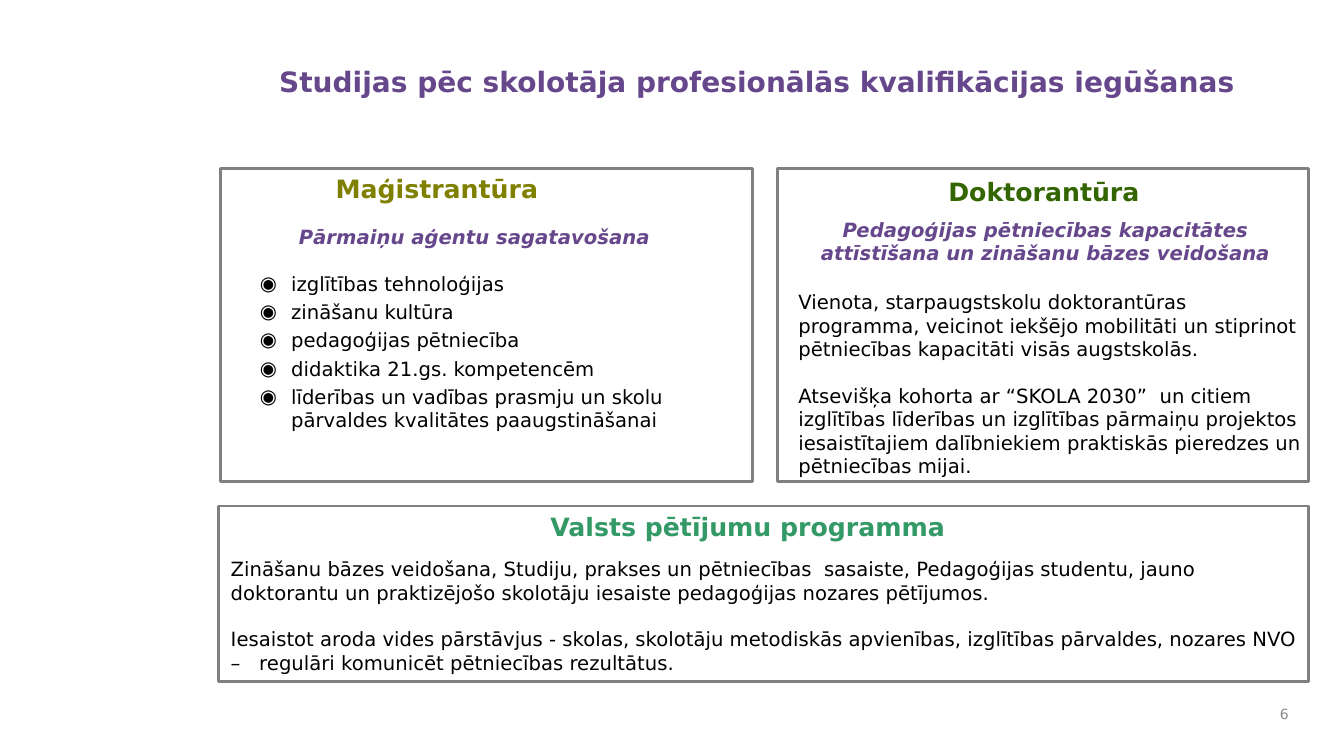
from lxml.etree import SubElement
from pptx import Presentation
from pptx.dml.color import RGBColor
from pptx.enum.shapes import MSO_SHAPE
from pptx.enum.text import MSO_ANCHOR, PP_ALIGN
from pptx.oxml.ns import qn
from pptx.util import Pt

PX = 9144  # EMU per px, at 100 px to the inch
FONT = "DejaVu Sans"

PURPLE = RGBColor(0x67, 0x47, 0x8B)
OLIVE = RGBColor(0x80, 0x80, 0x00)
DARK_GREEN = RGBColor(0x33, 0x66, 0x00)
GREEN = RGBColor(0x33, 0x99, 0x66)
BLACK = RGBColor(0x00, 0x00, 0x00)
GREY = RGBColor(0x80, 0x80, 0x80)
LIGHT_GREY = RGBColor(0x89, 0x89, 0x89)

HEADING = {"size": Pt(18), "bold": True}
SUBHEADING = {"size": Pt(14), "bold": True, "italic": True}
BODY = {"size": Pt(14)}
LINE_GAP = 16.4
BULLET_GAP = 3.3
BULLET_INDENT = 31

TOPICS = [
    "izglītības tehnoloģijas",
    "zināšanu kultūra",
    "pedagoģijas pētniecība",
    "didaktika 21.gs. kompetencēm",
    "līderības un vadības prasmju un skolu pārvaldes kvalitātes paaugstināšanai",
]
DOCTORATE = [
    "Vienota, starpaugstskolu doktorantūras programma, veicinot iekšējo mobilitāti "
    "un stiprinot pētniecības kapacitāti visās augstskolās.",
    "Atsevišķa kohorta ar “SKOLA 2030”  un citiem izglītības līderības un izglītības "
    "pārmaiņu projektos iesaistītajiem dalībniekiem praktiskās pieredzes un "
    "pētniecības mijai.",
]
RESEARCH = [
    "Zināšanu bāzes veidošana, Studiju, prakses un pētniecības  sasaiste, Pedagoģijas "
    "studentu, jauno doktorantu un praktizējošo skolotāju iesaiste pedagoģijas "
    "nozares pētījumos.",
    "Iesaistot aroda vides pārstāvjus - skolas, skolotāju metodiskās apvienības, "
    "izglītības pārvaldes, nozares NVO –   regulāri komunicēt pētniecības rezultātus.",
]


def emu(box):
    return [v * PX for v in box]


def add_bullet(p):
    pPr = p._p.get_or_add_pPr()
    pPr.set("marL", str(BULLET_INDENT * PX))
    pPr.set("indent", str(-BULLET_INDENT * PX))
    SubElement(pPr, qn("a:buFont"), typeface=FONT)
    SubElement(pPr, qn("a:buChar"), char="◉")


def add_text(s, box, lines, color, fmt, align=PP_ALIGN.LEFT, gap=0,
             bullets=False, wrap=True, anchor=MSO_ANCHOR.TOP):
    """Add a text box with one paragraph per line, gap points apart."""
    tf = s.shapes.add_textbox(*emu(box)).text_frame
    tf.word_wrap = wrap
    tf.vertical_anchor = anchor
    for i, line in enumerate(lines):
        p = tf.paragraphs[0] if i == 0 else tf.add_paragraph()
        p.alignment = align
        p.space_before = Pt(gap if i else 0)
        if bullets:
            add_bullet(p)
        r = p.add_run()
        r.text = line
        r.font.color.rgb = color
        for name, value in {"name": FONT, **fmt}.items():
            setattr(r.font, name, value)


def add_frame(s, box):
    sp = s.shapes.add_shape(MSO_SHAPE.RECTANGLE, *emu(box))
    sp.shadow.inherit = False
    sp.fill.background()
    sp.line.color.rgb = GREY
    sp.line.width = Pt(2)


def main():
    prs = Presentation()
    prs.slide_width, prs.slide_height = emu((1333, 750))
    s = prs.slides.add_slide(prs.slide_layouts[6])

    for box in ((219, 167, 527, 311), (771, 167, 527, 311), (217, 502, 1081, 174)):
        add_frame(s, box)

    add_text(s, (267, 59, 1003, 59),
             ["Studijas pēc skolotāja profesionālās kvalifikācijas iegūšanas"],
             PURPLE, {"size": Pt(20), "bold": True})

    add_text(s, (323, 167, 254, 40), ["Maģistrantūra"], OLIVE, HEADING)
    add_text(s, (283, 218, 375, 34), ["Pārmaiņu aģentu sagatavošana"], PURPLE,
             SUBHEADING, PP_ALIGN.CENTER, wrap=False)
    add_text(s, (248, 265, 453, 188), TOPICS, BLACK, BODY, gap=BULLET_GAP, bullets=True)

    add_text(s, (929, 170, 211, 40), ["Doktorantūra"], DARK_GREEN, HEADING,
             PP_ALIGN.RIGHT, wrap=False)
    add_text(s, (799, 211, 476, 57),
             ["Pedagoģijas pētniecības kapacitātes attīstīšana un zināšanu bāzes veidošana"],
             PURPLE, SUBHEADING, PP_ALIGN.CENTER)
    add_text(s, (782, 283, 522, 199), DOCTORATE, BLACK, BODY, gap=LINE_GAP)

    add_text(s, (536, 502, 492, 43), ["Valsts pētījumu programma"], GREEN, HEADING)
    add_text(s, (219, 548, 1079, 128), RESEARCH, BLACK, BODY, gap=LINE_GAP)

    add_text(s, (1244, 692, 44, 33), ["6"], LIGHT_GREY, {"size": Pt(10)},
             PP_ALIGN.RIGHT, anchor=MSO_ANCHOR.MIDDLE)
    prs.save("out.pptx")


if __name__ == "__main__":
    main()
